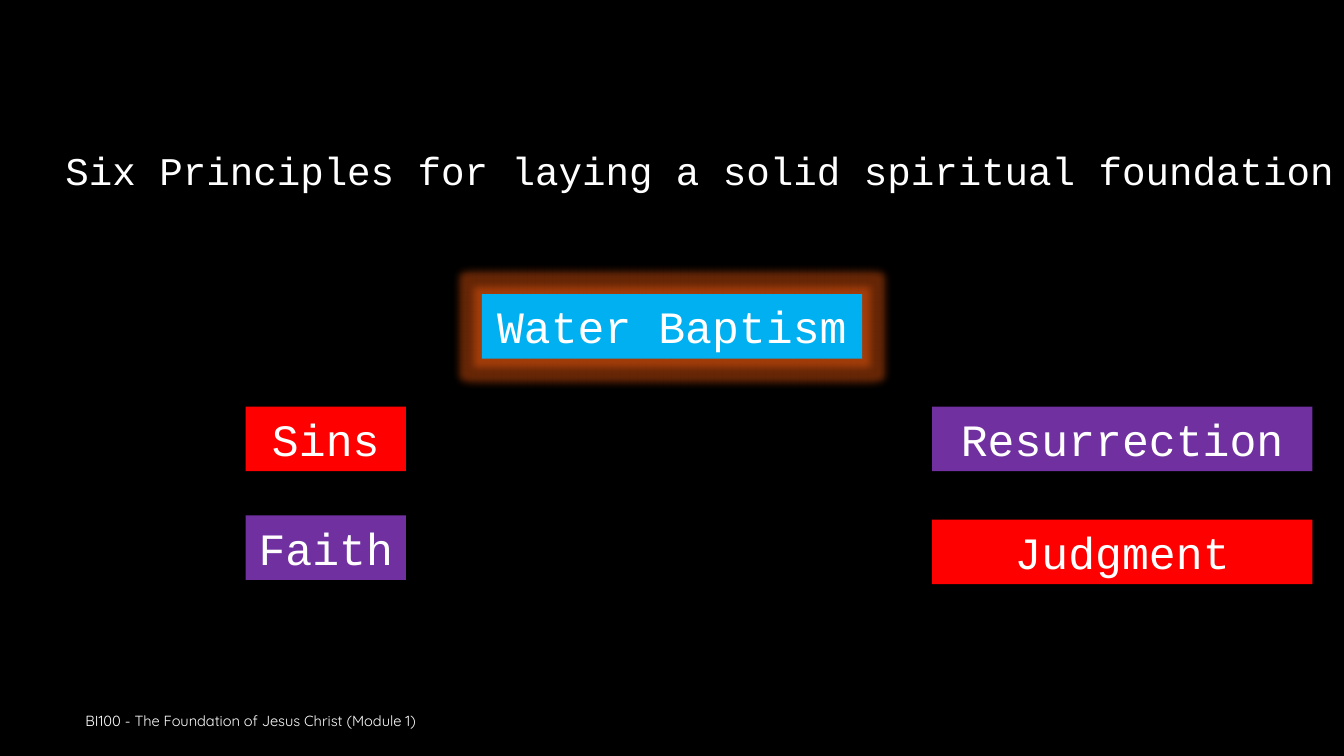
"""Build the slide on six principles for a spiritual foundation."""
import pptx
import pptx.dml.color
import pptx.enum.shapes
import pptx.enum.text
import pptx.oxml
import pptx.oxml.ns
import pptx.util

Pt = pptx.util.Pt
Align = pptx.enum.text.PP_ALIGN
Anchor = pptx.enum.text.MSO_ANCHOR


def tint(code):
    return pptx.dml.color.RGBColor.from_string(code)


def write(shape, text, size=32, font="Courier New", align=Align.CENTER, anchor=Anchor.TOP):
    frame = shape.text_frame
    frame.word_wrap = True
    frame.auto_size = pptx.enum.text.MSO_AUTO_SIZE.NONE
    frame.vertical_anchor = anchor
    frame.margin_left = frame.margin_right = Pt(7.2)
    frame.margin_top = frame.margin_bottom = Pt(3.6)
    para = frame.paragraphs[0]
    para.alignment = align
    para.line_spacing = 1.0
    para.space_before = Pt(0)
    run = para.add_run()
    run.text = text
    run.font.name = font
    run.font.size = Pt(size)
    run.font.color.rgb = tint("FFFFFF")


deck = pptx.Presentation()
deck.slide_width, deck.slide_height = Pt(960), Pt(540)
slide = deck.slides.add_slide(deck.slide_layouts[5])
slide.background.fill.solid()
slide.background.fill.fore_color.rgb = tint("000000")

foot = slide.shapes.add_textbox(Pt(54), Pt(500.4), Pt(612), Pt(28.8))
write(foot, "BI100 - The Foundation of Jesus Christ (Module 1)", size=10.5,
      font="Quicksand", align=Align.LEFT, anchor=Anchor.MIDDLE)

title = slide.shapes.title
title.left, title.top, title.width, title.height = Pt(0), Pt(100.8), Pt(960), Pt(41)
write(title, "Six Principles for laying a solid spiritual foundation", size=28, align=Align.RIGHT)

red, purple, blue = "FF0000", "7030A0", "00B0F0"
narrow, wide = 114.5, 271.5
boxes = [
    ("Sins", 175.5, 290.4, narrow, red),
    ("Faith", 175.5, 368.2, narrow, purple),
    ("Water Baptism", 344.3, 210.2, wide, blue),
    ("Resurrection", 665.9, 290.4, wide, purple),
    ("Judgment", 665.9, 371.2, wide, red),
]
cards = {}
for name, left, top, width, color in boxes:
    card = slide.shapes.add_shape(pptx.enum.shapes.MSO_SHAPE.RECTANGLE,
                                  Pt(left), Pt(top), Pt(width), Pt(46.1))
    card.fill.solid()
    card.fill.fore_color.rgb = tint(color)
    card.line.fill.background()
    card.shadow.inherit = False
    write(card, name)
    cards[name] = card

glow = pptx.oxml.parse_xml(
    f'<a:glow {pptx.oxml.ns.nsdecls("a")} rad="{Pt(11)}">'
    '<a:srgbClr val="FF6010"><a:alpha val="40000"/></a:srgbClr></a:glow>')
props = cards["Water Baptism"].element.spPr
props.find(pptx.oxml.ns.qn("a:effectLst")).append(glow)

deck.save("out.pptx")
